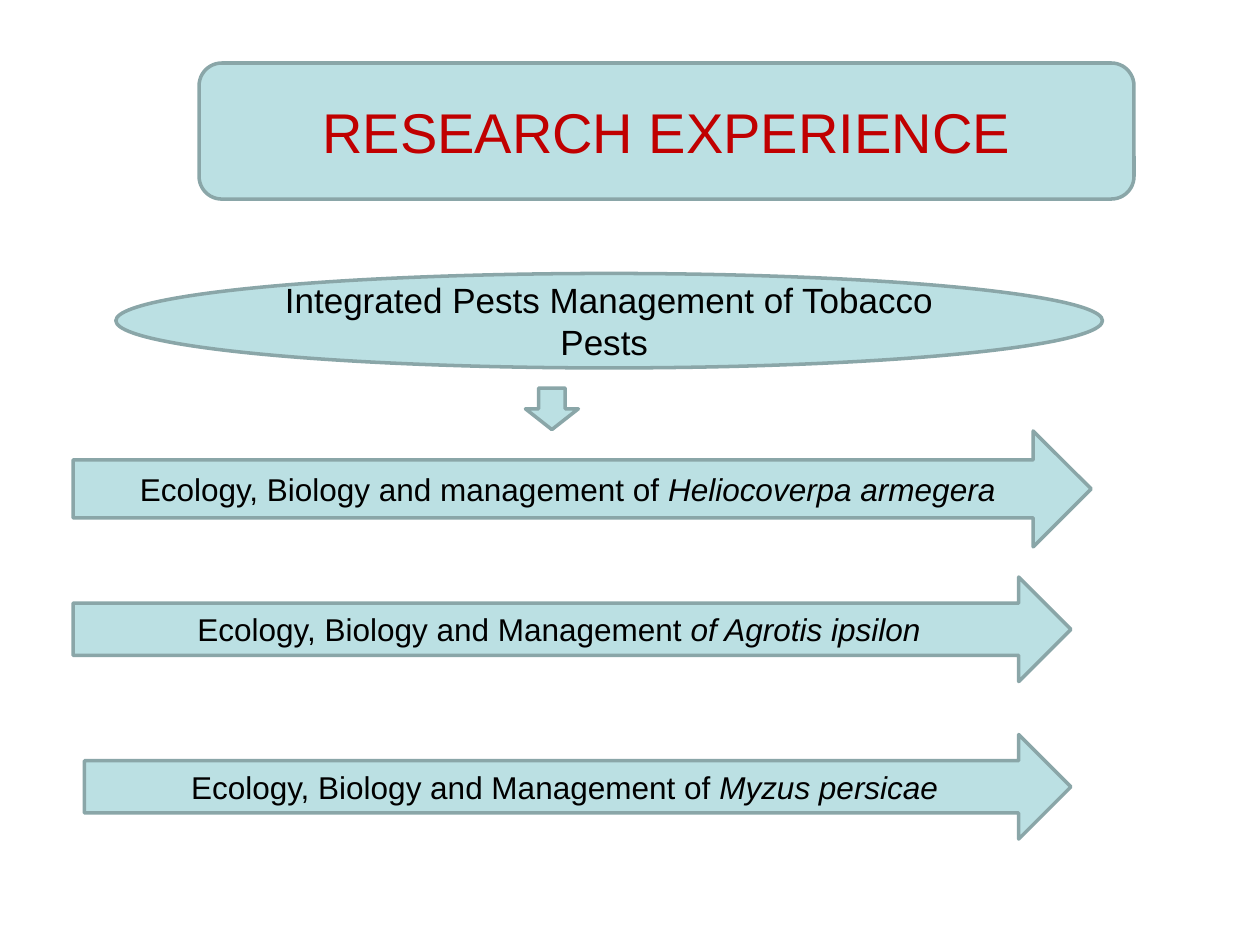
from pptx import Presentation
from pptx.dml.color import RGBColor
from pptx.enum.shapes import MSO_SHAPE as SHAPE
from pptx.enum.text import MSO_ANCHOR as ANCHOR, MSO_AUTO_SIZE as AUTO, PP_ALIGN as ALIGN
from pptx.util import Inches, Pt

FILL = RGBColor(0xBB, 0xE0, 0xE3)
LINE = RGBColor(0x8A, 0xA6, 0xA8)
RED = RGBColor(0xC0, 0x00, 0x00)
BLACK = RGBColor(0x00, 0x00, 0x00)


def add_box(kind, left, top, width, height):
    sp = s.shapes.add_shape(kind, Inches(left), Inches(top), Inches(width), Inches(height))
    sp.shadow.inherit = False
    sp.fill.solid()
    sp.fill.fore_color.rgb = FILL
    sp.line.color.rgb = LINE
    sp.line.width = Pt(2)
    return sp


def write(sp, text, italic_text="", size=18, color=BLACK):
    tf = sp.text_frame
    tf.word_wrap = True
    tf.auto_size = AUTO.NONE
    tf.vertical_anchor = ANCHOR.MIDDLE
    p = tf.paragraphs[0]
    p.alignment = ALIGN.CENTER
    for part, italic in ((text, False), (italic_text, True)):
        if part:
            r = p.add_run()
            r.text = part
            r.font.name = "Arial"
            r.font.size = Pt(size)
            r.font.italic = italic
            r.font.color.rgb = color


prs = Presentation()
prs.slide_width, prs.slide_height = Inches(10), Inches(7.5)
s = prs.slides.add_slide(prs.slide_layouts[5])

banner = add_box(SHAPE.ROUNDED_RECTANGLE, 1.58, 0.5, 7.42, 1.08)
title = s.shapes.title
title.left, title.top = banner.left, banner.top
title.width, title.height = banner.width, banner.height
write(title, "RESEARCH EXPERIENCE", size=32, color=RED)
banner._element.addnext(title._element)

topic = add_box(SHAPE.OVAL, 0.92, 2.17, 7.83, 0.75)
write(topic, "Integrated Pests Management of Tobacco Pests ", size=20)

studies = [
    (0.58, 3.42, 8.08, 0.92, "Ecology, Biology and management of ", "Heliocoverpa armegera"),
    (0.58, 4.58, 7.92, 0.83, "Ecology, Biology and Management ", "of Agrotis ipsilon"),
    (0.67, 5.83, 7.83, 0.83, "Ecology, Biology and Management of ", "Myzus persicae"),
]
for left, top, width, height, text, species in studies:
    write(add_box(SHAPE.RIGHT_ARROW, left, top, width, height), text, species)

add_box(SHAPE.DOWN_ARROW, 4.17, 3.08, 0.42, 0.33)

prs.save("out.pptx")
